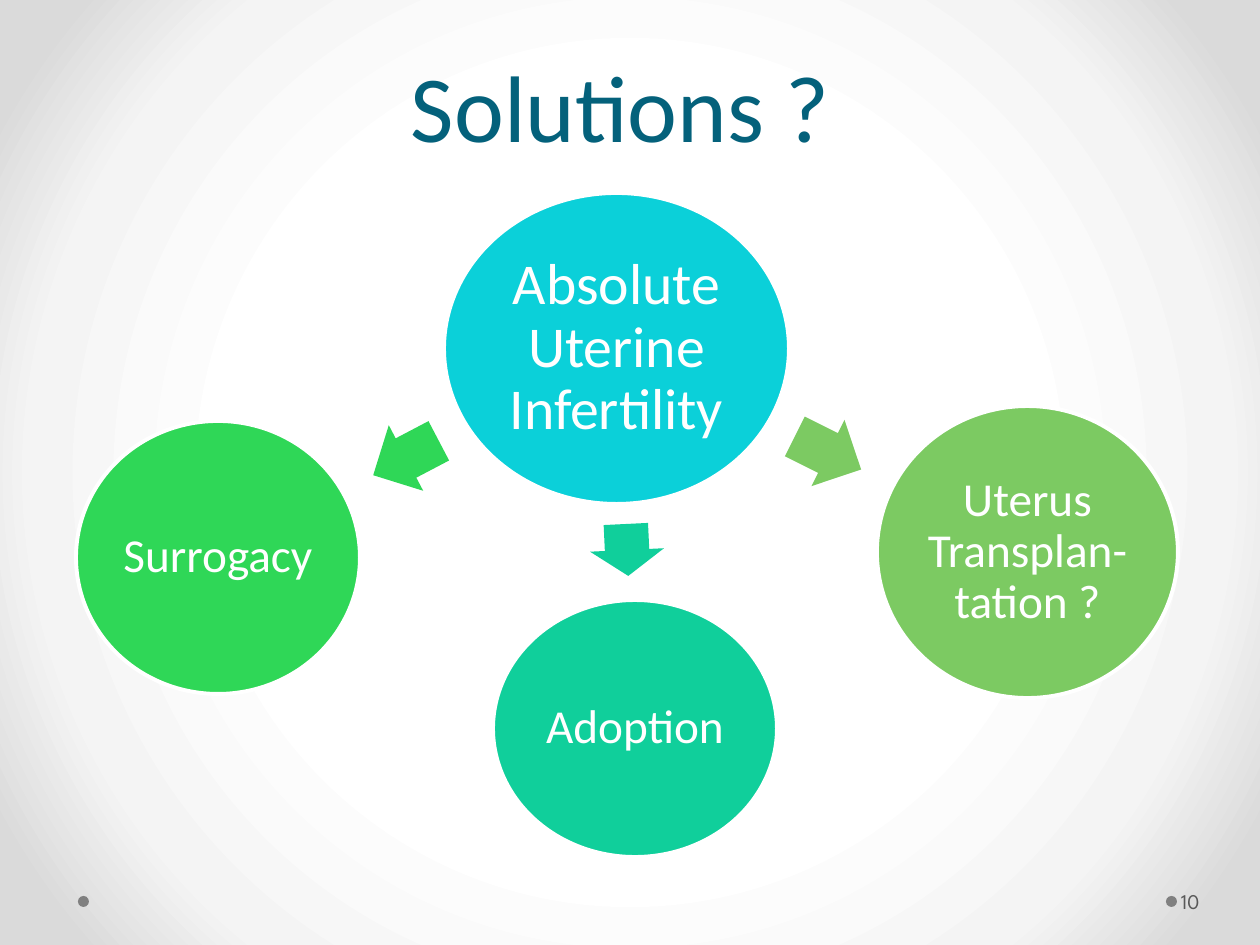
from lxml.etree import SubElement
from pptx import Presentation
from pptx.dml.color import RGBColor
from pptx.enum.shapes import MSO_SHAPE
from pptx.enum.text import MSO_ANCHOR, PP_ALIGN
from pptx.oxml.ns import qn
from pptx.util import Emu, Pt

PX = 7257.6
HEX = {
    "title": "04617B", "cyan": "0BD0D9", "teal": "10CF9B", "lime": "2FD757",
    "leaf": "7CCA62", "white": "FFFFFF", "dot": "808080", "page": "595959",
}
GLOW = [(50, "FFFFFF"), (76, "F4F4F4"), (92, "DADADA")]
TITLE = ("Solutions ? ", (64, -53, 1134, 220))
NODES = [
    ("Absolute Uterine Infertility", "cyan", 33, (444, 193, 345, 311)),
    ("Adoption", "teal", 27, (493, 600, 284, 257)),
    ("Surrogacy", "lime", 27, (76, 421, 284, 273)),
    ("Uterus Transplan-tation ?", "leaf", 27, (877, 406, 301, 292)),
]
ARROWS = [
    ("teal", 87.3, (601, 513, 52, 74)),
    ("lime", 152.3, (369, 421, 74, 74)),
    ("leaf", 26.5, (791, 416, 74, 74)),
]
DOTS = [(1166, 896, 11, 11), (78, 896, 11, 11)]
PAGE = ("10", (1177, 876, 77, 50))


def rgb(name):
    return RGBColor.from_string(HEX[name])


def emu(box):
    return [Emu(round(v * PX)) for v in box]


def draw(kind, box, hue):
    shape = slide.shapes.add_shape(kind, *emu(box))
    shape.shadow.inherit = False
    shape.fill.solid()
    shape.fill.fore_color.rgb = rgb(hue)
    shape.line.fill.background()
    return shape


def write(shape, text, face, size, hue, align, anchor, pad):
    frame = shape.text_frame
    frame.word_wrap = True
    frame.vertical_anchor = anchor
    frame.margin_left = frame.margin_right = Emu(round(pad * PX))
    frame.margin_top = frame.margin_bottom = Emu(round(pad * PX))
    para = frame.paragraphs[0]
    para.text = text
    para.alignment = align
    para.font.name = face
    para.font.size = Pt(size)
    para.font.color.rgb = rgb(hue)
    return para


def glow():
    slide.background.fill.gradient()
    grad = slide.element.find(".//" + qn("a:gradFill"))
    for kid in list(grad):
        grad.remove(kid)
    stops = SubElement(grad, qn("a:gsLst"))
    for pos, color in GLOW:
        stop = SubElement(stops, qn("a:gs"), pos=str(pos * 1000))
        SubElement(stop, qn("a:srgbClr"), val=color)
    ring = SubElement(grad, qn("a:path"), path="circle")
    SubElement(ring, qn("a:fillToRect"), dict.fromkeys("ltrb", "50000"))


deck = Presentation()
deck.slide_width, deck.slide_height = emu((1260, 945))
slide = deck.slides.add_slide(deck.slide_layouts[5])
glow()

for box in DOTS:
    draw(MSO_SHAPE.OVAL, box, "dot")

text, box = TITLE
head = slide.shapes.title
head.left, head.top, head.width, head.height = emu(box)
para = write(head, text, "Calibri", 54, "title", PP_ALIGN.CENTER, MSO_ANCHOR.BOTTOM, 6)
para.line_spacing = Pt(58)

for text, hue, size, box in NODES:
    node = draw(MSO_SHAPE.OVAL, box, hue)
    node.line.color.rgb = rgb("white")
    node.line.width = Pt(2.25)
    para = write(node, text, "Calibri", size, "white", PP_ALIGN.CENTER, MSO_ANCHOR.MIDDLE, 5)
    para.line_spacing = 0.9

for hue, turn, box in ARROWS:
    arrow = draw(MSO_SHAPE.RIGHT_ARROW, box, hue)
    arrow.rotation = turn
    arrow.adjustments[0] = 0.6
    arrow.adjustments[1] = 0.5

text, box = PAGE
write(slide.shapes.add_textbox(*emu(box)), text, "League Spartan", 12, "page",
      PP_ALIGN.LEFT, MSO_ANCHOR.MIDDLE, 4)

deck.save("out.pptx")
